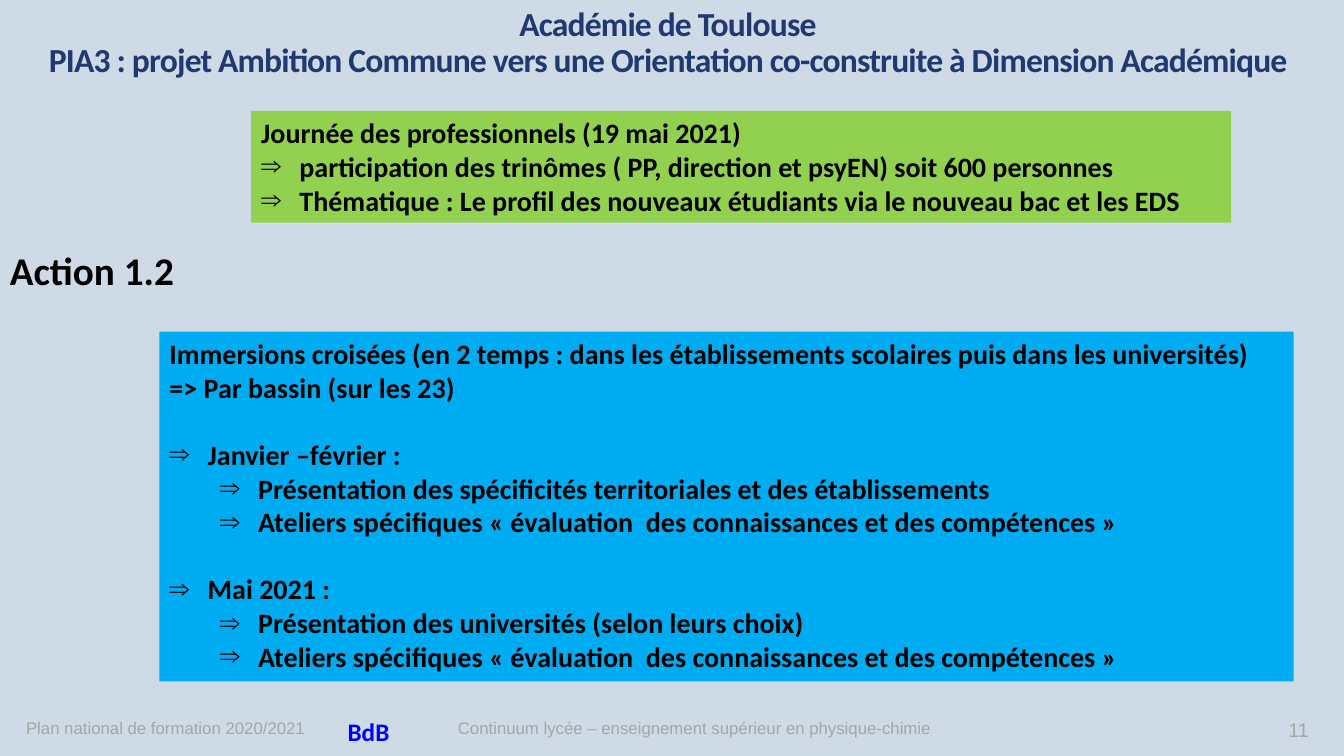
from dataclasses import dataclass

from lxml.etree import SubElement
from pptx import Presentation
from pptx.dml.color import RGBColor
from pptx.enum.text import MSO_ANCHOR, MSO_AUTO_SIZE, PP_ALIGN
from pptx.oxml.ns import qn
from pptx.util import Inches, Pt

BACKGROUND = RGBColor(0xCE, 0xDB, 0xE6)
NAVY = RGBColor(0x21, 0x38, 0x70)
BLACK = RGBColor(0x00, 0x00, 0x00)
GREY = RGBColor(0xA6, 0xA6, 0xA6)
BLUE = RGBColor(0x00, 0x00, 0xFF)
GREEN_FILL = RGBColor(0x92, 0xD0, 0x50)
CYAN_FILL = RGBColor(0x00, 0xAC, 0xF1)
HANGING = 0.38
LEVEL_STEP = 0.5


@dataclass
class Label:
    text: str
    left: float
    top: float
    width: float
    height: float
    size: int
    color: RGBColor
    font: str = "Arial"
    bold: bool = False
    align: PP_ALIGN = PP_ALIGN.LEFT


@dataclass
class Item:
    text: str
    level: int | None = None  # None: no bullet
    gap: int = 0


@dataclass
class Panel:
    left: float
    top: float
    width: float
    height: float
    fill: RGBColor
    items: list[Item]


WORKSHOPS = Item("Ateliers spécifiques « évaluation  des connaissances et des compétences »", 1)

PANELS = [
    Panel(2.49, 1.1, 9.72, 1.11, GREEN_FILL, [
        Item("Journée des professionnels (19 mai 2021)"),
        Item("participation des trinômes ( PP, direction et psyEN) soit 600 personnes", 0),
        Item("Thématique : Le profil des nouveaux étudiants via le nouveau bac et les EDS", 0),
    ]),
    Panel(1.58, 3.29, 11.25, 3.47, CYAN_FILL, [
        Item("Immersions croisées (en 2 temps : dans les établissements scolaires puis dans les universités)"),
        Item("=> Par bassin (sur les 23)"),
        Item("Janvier –février :", 0, gap=24),
        Item("Présentation des spécificités territoriales et des établissements", 1),
        WORKSHOPS,
        Item("Mai 2021 :", 0, gap=24),
        Item("Présentation des universités (selon leurs choix)", 1),
        WORKSHOPS,
    ]),
]

LABELS = [
    Label("Plan national de formation 2020/2021", 0.16, 7.07, 2.99, 0.3, 12, GREY),
    Label("Continuum lycée – enseignement supérieur en physique-chimie",
          4.43, 7.07, 4.92, 0.3, 12, GREY, align=PP_ALIGN.CENTER),
    Label("11", 12.68, 7.07, 0.66, 0.4, 14, GREY),
    Label("Action 1.2", 0, 2.39, 2.06, 0.57, 28, BLACK, "Calibri", True),
    Label("BdB", 3.35, 7.06, 0.66, 0.4, 18, BLUE, "Calibri", True),
]


def place(shape, left: float, top: float, width: float, height: float) -> None:
    shape.left, shape.top = Inches(left), Inches(top)
    shape.width, shape.height = Inches(width), Inches(height)


def style_runs(paragraph, font: str, size: int, color: RGBColor, bold: bool) -> None:
    for run in paragraph.runs:
        run.font.name = font
        run.font.size = Pt(size)
        run.font.bold = bold
        run.font.color.rgb = color


def set_bullet(paragraph, level: int | None) -> None:
    properties = paragraph._p.get_or_add_pPr()
    if level is None:
        properties.set("marL", "0")
        properties.set("indent", "0")
        SubElement(properties, qn("a:buNone"))
        return
    paragraph.level = level
    properties.set("marL", str(Inches(HANGING + LEVEL_STEP * level)))
    properties.set("indent", str(-Inches(HANGING)))
    SubElement(properties, qn("a:buFont")).set("typeface", "Arial")
    SubElement(properties, qn("a:buChar")).set("char", "⇒")


def fill_panel(body, panel: Panel) -> None:
    place(body, panel.left, panel.top, panel.width, panel.height)
    body.fill.solid()
    body.fill.fore_color.rgb = panel.fill
    frame = body.text_frame
    frame.auto_size = MSO_AUTO_SIZE.NONE
    frame.vertical_anchor = MSO_ANCHOR.TOP
    frame.text = "\n".join(item.text for item in panel.items)
    for paragraph, item in zip(frame.paragraphs, panel.items):
        set_bullet(paragraph, item.level)
        paragraph.space_before = Pt(item.gap)
        style_runs(paragraph, "Calibri", 20, BLACK, True)


def add_label(slide, label: Label) -> None:
    box = slide.shapes.add_textbox(0, 0, 0, 0)
    place(box, label.left, label.top, label.width, label.height)
    frame = box.text_frame
    frame.word_wrap = False
    frame.text = label.text
    paragraph = frame.paragraphs[0]
    paragraph.alignment = label.align
    style_runs(paragraph, label.font, label.size, label.color, label.bold)


def add_title(slide) -> None:
    title = slide.shapes.title
    place(title, 0, 0.03, 13.25, 0.81)
    frame = title.text_frame
    frame.auto_size = MSO_AUTO_SIZE.NONE
    frame.vertical_anchor = MSO_ANCHOR.MIDDLE
    heading = frame.paragraphs[0]
    heading.text = ("Académie de Toulouse\v"
                    "PIA3 : projet Ambition Commune vers une Orientation "
                    "co-construite à Dimension Académique")
    heading.alignment = PP_ALIGN.CENTER
    heading.line_spacing = 0.9
    style_runs(heading, "Calibri", 24, NAVY, True)
    for run in heading.runs:
        run.font._element.set("spc", "-60")


def main() -> None:
    deck = Presentation()
    deck.slide_width, deck.slide_height = Inches(13.33), Inches(7.5)
    two_content = deck.slide_layouts[3]
    slide = deck.slides.add_slide(two_content)
    slide.background.fill.solid()
    slide.background.fill.fore_color.rgb = BACKGROUND

    # Title
    add_title(slide)

    # Event panels
    for index, panel in enumerate(PANELS, start=1):
        fill_panel(slide.placeholders[index], panel)

    # Action heading and footer
    for label in LABELS:
        add_label(slide, label)

    deck.save("out.pptx")


if __name__ == "__main__":
    main()
